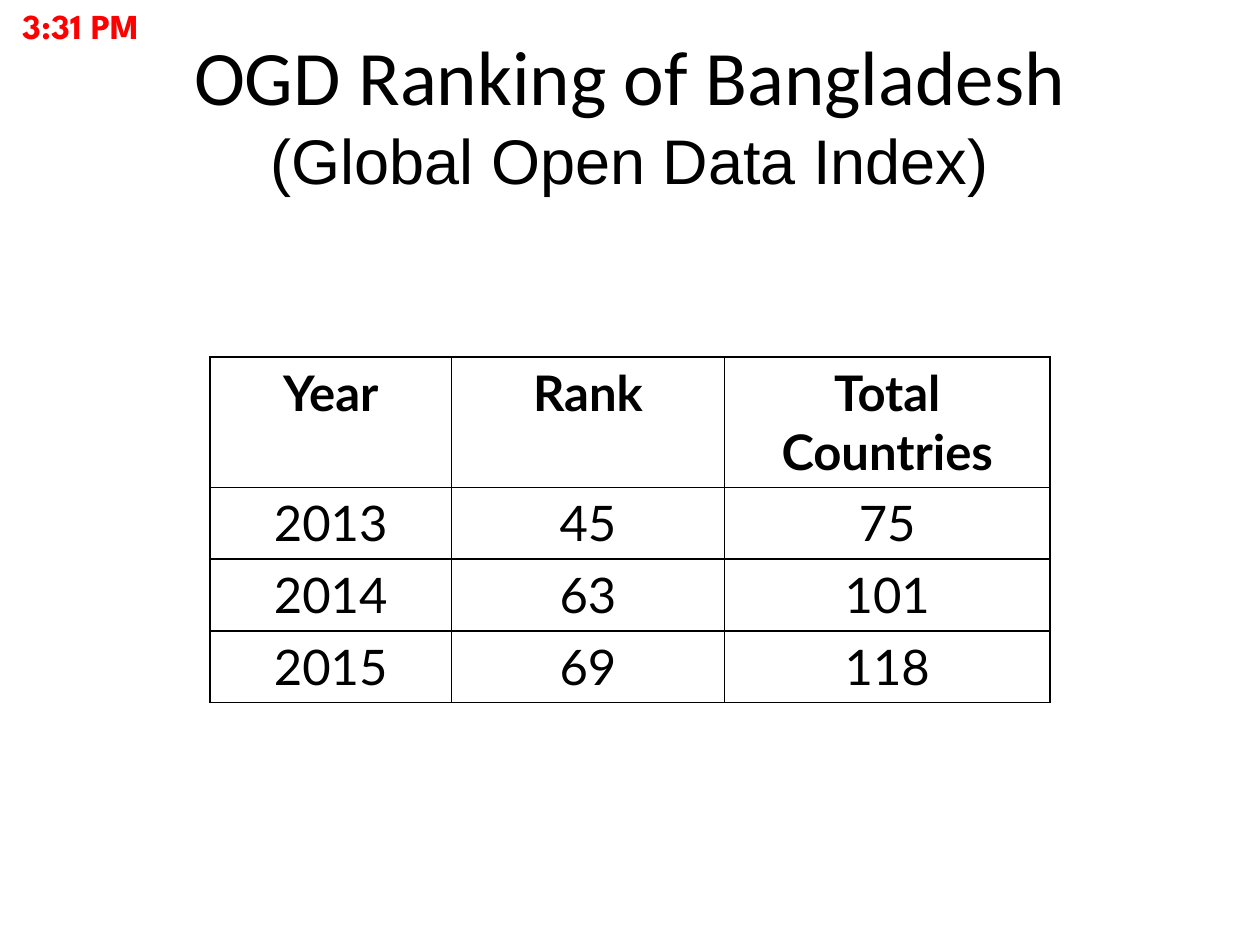
from dataclasses import dataclass

from lxml.etree import SubElement
from pptx import Presentation
from pptx.dml.color import RGBColor
from pptx.enum.text import MSO_ANCHOR as ANCHOR, PP_ALIGN as ALIGN
from pptx.oxml.ns import qn
from pptx.util import Pt


@dataclass(frozen=True)
class Theme:
    ink: str = "000000"
    clock: str = "FF0000"
    title_size: int = 44
    subtitle_size: int = 36
    table_size: int = 28
    clock_size: int = 20
    border: float = 1


class Deck:
    def __init__(self, prs, theme):
        self.theme = theme
        self.s = prs.slides.add_slide(prs.slide_layouts[6])

    def run(self, p, text, color, **fmt):
        r = p.add_run()
        r.text = text
        for name, value in fmt.items():
            setattr(r.font, name, value)
        r.font.color.rgb = RGBColor.from_string(color)

    def text(self, box, lines, align):
        sp = self.s.shapes.add_textbox(*map(Pt, box))
        tf = sp.text_frame
        tf.word_wrap = True
        tf.vertical_anchor = ANCHOR.MIDDLE
        p = tf.paragraphs[0]
        p.alignment = align
        for i, (text, color, fmt) in enumerate(lines):
            if i:
                p.add_line_break()
            self.run(p, text, color, **fmt)

    def borders(self, cell):
        tc_pr = cell._tc.get_or_add_tcPr()
        for side in ("lnL", "lnR", "lnT", "lnB"):
            ln = SubElement(tc_pr, qn(f"a:{side}"), w=str(Pt(self.theme.border)))
            fill = SubElement(ln, qn("a:solidFill"))
            SubElement(fill, qn("a:srgbClr"), val=self.theme.ink)

    def table(self, left, top, widths, heights, rows):
        frame = self.s.shapes.add_table(
            len(rows), len(widths), Pt(left), Pt(top), Pt(sum(widths)), Pt(sum(heights)))
        table = frame.table
        table.first_row = table.horz_banding = False
        for col, width in zip(table.columns, widths):
            col.width = Pt(width)
        for i, (row, height, values) in enumerate(zip(table.rows, heights, rows)):
            row.height = Pt(height)
            for cell, value in zip(row.cells, values):
                self.borders(cell)
                cell.fill.background()
                p = cell.text_frame.paragraphs[0]
                p.alignment = ALIGN.CENTER
                self.run(p, value, self.theme.ink, name="Lato",
                         size=Pt(self.theme.table_size), bold=i == 0)


def main():
    prs = Presentation()
    prs.slide_width, prs.slide_height = Pt(720), Pt(540)
    theme = Theme()
    deck = Deck(prs, theme)
    deck.text((36, 8.64, 648, 111.6), [
        ("OGD Ranking of Bangladesh", theme.ink,
         {"name": "Calibri", "size": Pt(theme.title_size)}),
        ("(Global Open Data Index)", theme.ink,
         {"name": "Arial", "size": Pt(theme.subtitle_size)}),
    ], ALIGN.CENTER)
    deck.table(120, 204, (138, 156, 186), (74, 41, 41, 41), [
        ("Year", "Rank", "Total Countries"),
        ("2013", "45", "75"),
        ("2014", "63", "101"),
        ("2015", "69", "118"),
    ])
    deck.text((6, 0, 126, 28.8), [
        ("3:31 PM", theme.clock,
         {"name": "League Spartan", "size": Pt(theme.clock_size), "bold": True}),
    ], ALIGN.LEFT)
    prs.save("out.pptx")


if __name__ == "__main__":
    main()
